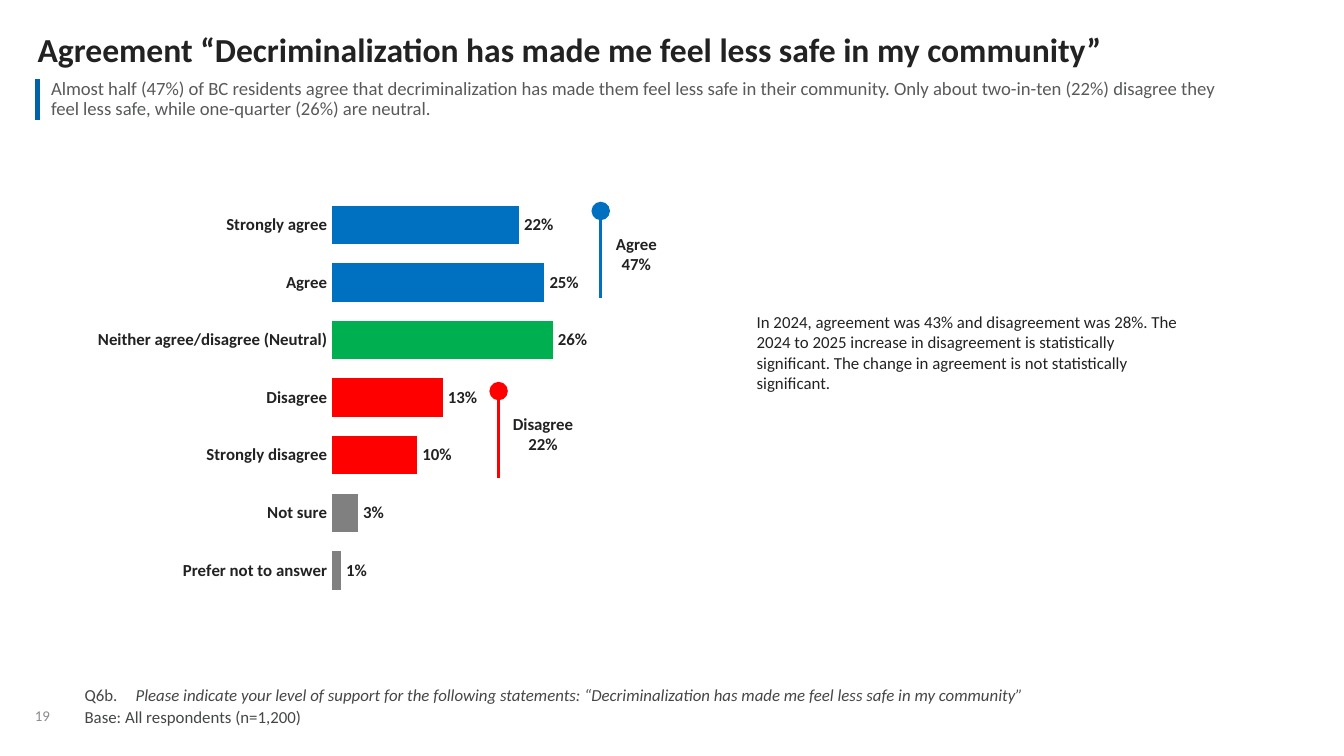
from lxml import etree
from pptx import Presentation
from pptx.chart.data import CategoryChartData
from pptx.dml.color import RGBColor
from pptx.enum.chart import (XL_CHART_TYPE, XL_LABEL_POSITION, XL_TICK_LABEL_POSITION,
                             XL_TICK_MARK)
from pptx.enum.shapes import MSO_CONNECTOR
from pptx.enum.text import MSO_ANCHOR, PP_ALIGN
from pptx.oxml import parse_xml
from pptx.oxml.ns import nsdecls, qn
from pptx.util import Inches, Pt

BAR_CLUSTERED = XL_CHART_TYPE.BAR_CLUSTERED
OUTSIDE_END = XL_LABEL_POSITION.OUTSIDE_END
NO_LABELS = XL_TICK_LABEL_POSITION.NONE
NO_TICKS = XL_TICK_MARK.NONE
STRAIGHT = MSO_CONNECTOR.STRAIGHT
TOP, MIDDLE, BOTTOM = MSO_ANCHOR.TOP, MSO_ANCHOR.MIDDLE, MSO_ANCHOR.BOTTOM
LEFT, CENTER = PP_ALIGN.LEFT, PP_ALIGN.CENTER

INK = RGBColor(0x22, 0x22, 0x23)
FOOTNOTE = RGBColor(0x44, 0x46, 0x47)
SUMMARY = RGBColor(0x58, 0x59, 0x5B)
PAGE_NUMBER = RGBColor(0x88, 0x8B, 0x8D)
ACCENT = RGBColor(0x01, 0x61, 0xAB)
WHITE = RGBColor(0xFF, 0xFF, 0xFF)
BLUE = RGBColor(0x00, 0x70, 0xC0)
GREEN = RGBColor(0x00, 0xB0, 0x50)
RED = RGBColor(0xFF, 0x00, 0x00)
GRAY = RGBColor(0x80, 0x80, 0x80)

ANSWERS = [
    ("Strongly agree", 0.22, BLUE),
    ("Agree", 0.25, BLUE),
    ("Neither agree/disagree (Neutral)", 0.26, GREEN),
    ("Disagree", 0.13, RED),
    ("Strongly disagree", 0.10, RED),
    ("Not sure", 0.03, GRAY),
    ("Prefer not to answer", 0.01, GRAY),
]


class SlideBuilder:
    font_name = "Calibri"

    def __init__(self, slide):
        self.slide = slide

    def style(self, font, size, color, bold=False):
        font.name = self.font_name
        font.size = Pt(size)
        font.color.rgb = color
        font.bold = bold

    def text(self, box, lines, size, color, bold=False, align=LEFT, anchor=TOP,
             inset=0, wrap=True, line_spacing=1.0):
        shape = self.slide.shapes.add_textbox(*map(Inches, box))
        frame = shape.text_frame
        frame.margin_left = frame.margin_right = Inches(inset)
        frame.margin_top = frame.margin_bottom = Inches(inset)
        frame.word_wrap = wrap
        frame.vertical_anchor = anchor
        frame.text = "\n".join(lines)
        for paragraph in frame.paragraphs:
            paragraph.alignment = align
            paragraph.line_spacing = line_spacing
            for run in paragraph.runs:
                self.style(run.font, size, color, bold)
        return frame

    def footnote(self, box, label, question, base):
        frame = self.text(box, [label + "\t", base], 9, FOOTNOTE, anchor=BOTTOM,
                          line_spacing=0.9)
        for paragraph in frame.paragraphs:
            paragraph.space_after = Pt(2)
            properties = paragraph._p.get_or_add_pPr()
            properties.set("marL", str(Inches(0.38)))
            properties.set("indent", str(-Inches(0.38)))
        run = frame.paragraphs[0].add_run()
        run.text = question
        self.style(run.font, 9, FOOTNOTE)
        run.font.italic = True

    def summary(self, box, text):
        table = self.slide.shapes.add_table(1, 1, *map(Inches, box)).table
        table.first_row = table.horz_banding = False
        cell = table.cell(0, 0)
        cell.margin_left = cell.margin_right = Inches(0.1)
        cell.margin_top = cell.margin_bottom = 0
        cell.vertical_anchor = MIDDLE
        cell.fill.background()
        borders = [("lnL", ACCENT, 3), ("lnR", WHITE, 1), ("lnT", None, 0), ("lnB", None, 0)]
        for index, (tag, color, width) in enumerate(borders):
            paint = (f'<a:solidFill><a:srgbClr val="{color}"/></a:solidFill>'
                     if color is not None else '<a:noFill/>')
            border = parse_xml(
                f'<a:{tag} {nsdecls("a")} w="{Pt(width)}">{paint}</a:{tag}>')
            cell._tc.get_or_add_tcPr().insert(index, border)
        cell.text_frame.text = text
        paragraph = cell.text_frame.paragraphs[0]
        paragraph.line_spacing = 0.9
        paragraph.space_after = Pt(3)
        self.style(paragraph.runs[0].font, 10, SUMMARY)

    def bar_chart(self, box, answers, plot_area):
        names, values, colors = zip(*answers)
        data = CategoryChartData(number_format="0%")
        data.categories = names
        data.add_series("Series 1", values)
        chart = self.slide.shapes.add_chart(BAR_CLUSTERED, *map(Inches, box), data).chart
        chart.has_legend = chart.has_title = False
        self.style(chart.font, 9, INK, bold=True)

        # Axes
        category_axis, value_axis = chart.category_axis, chart.value_axis
        for axis in (category_axis, value_axis):
            axis.major_tick_mark = axis.minor_tick_mark = NO_TICKS
            axis.has_major_gridlines = False
            axis.format.line.fill.background()
        category_axis.reverse_order = True
        value_axis.tick_label_position = NO_LABELS
        value_axis.minimum_scale, value_axis.maximum_scale = 0, 1
        value_axis.major_unit = 0.2

        # Bars and their labels
        plot = chart.plots[0]
        plot.gap_width = 50
        plot.vary_by_categories = False
        plot.has_data_labels = True
        labels = plot.data_labels
        labels.show_value = True
        labels.number_format = "0%"
        labels.number_format_is_linked = False
        labels.position = OUTSIDE_END
        self.style(labels.font, 9, INK, bold=True)
        for index, color in enumerate(colors):
            fill = plot.series[0].points[index].format.fill
            fill.solid()
            fill.fore_color.rgb = color

        # Fixed inner plot area
        area = chart._chartSpace.chart.plotArea
        for old_layout in area.findall(qn("c:layout")):
            area.remove(old_layout)
        settings = [("layoutTarget", "inner"), ("xMode", "edge"), ("yMode", "edge")]
        settings += zip("xywh", plot_area)
        entries = "".join(f'<c:{tag} val="{value}"/>' for tag, value in settings)
        area.insert(0, parse_xml(f'<c:layout {nsdecls("c")}><c:manualLayout>{entries}'
                                 '</c:manualLayout></c:layout>'))

    def marker_line(self, left, top, height, color):
        line = self.slide.shapes.add_connector(
            STRAIGHT, *map(Inches, (left, top, left, top + height)))
        line.line.color.rgb = color
        line.line.width = Pt(1.5)
        etree.SubElement(line.line._get_or_add_ln(), qn("a:headEnd"),
                         type="oval", w="lg", len="lg")
        etree.SubElement(line._element.spPr, qn("a:effectLst"))


def main():
    presentation = Presentation()
    presentation.slide_width = Inches(10)
    presentation.slide_height = Inches(10 * 9 / 16)
    slide = presentation.slides.add_slide(presentation.slide_layouts[6])
    builder = SlideBuilder(slide)

    # Heading
    builder.text((0.28, 0.25, 9.46, 0.27),
                 ["Agreement “Decriminalization has made me feel less safe in my community”"],
                 18, INK, bold=True, line_spacing=0.9)
    builder.summary((0.28, 0.59, 9, 0.3),
                    "Almost half (47%) of BC residents agree that decriminalization has made "
                    "them feel less safe in their community. Only about two-in-ten (22%) "
                    "disagree they feel less safe, while one-quarter (26%) are neutral.")

    # Chart with group totals
    builder.bar_chart((0.28, 1.46, 8.5, 3), ANSWERS, (0.258, 0, 0.742, 1))
    totals = [("Agree", "47%", 4.47, 1.57, 4.56, 0.35, BLUE),
              ("Disagree", "22%", 3.71, 2.91, 3.79, 0.5, RED)]
    for name, share, line_left, top, label_left, label_width, color in totals:
        builder.marker_line(line_left, top, 0.65, color)
        builder.text((label_left, top + 0.15, label_width, 0.34), [name, share], 9, INK,
                     bold=True, align=CENTER, inset=0.02, wrap=False)

    # Comparison with the previous year
    builder.text((5.63, 2.32, 3.15, 0.61),
                 ["In 2024, agreement was 43% and disagreement was 28%. The 2024 to 2025 "
                  "increase in disagreement is statistically significant. The change in "
                  "agreement is not statistically significant."], 9, INK)

    # Footer
    builder.footnote((0.63, 5.1, 8.4, 0.31), "Q6b.",
                     "Please indicate your level of support for the following statements: "
                     "“Decriminalization has made me feel less safe in my community”",
                     "Base: All respondents (n=1,200)")
    builder.text((0.26, 5.13, 0.34, 0.26), ["19"], 8, PAGE_NUMBER, anchor=BOTTOM,
                 line_spacing=0.85)

    presentation.save("out.pptx")


if __name__ == "__main__":
    main()
